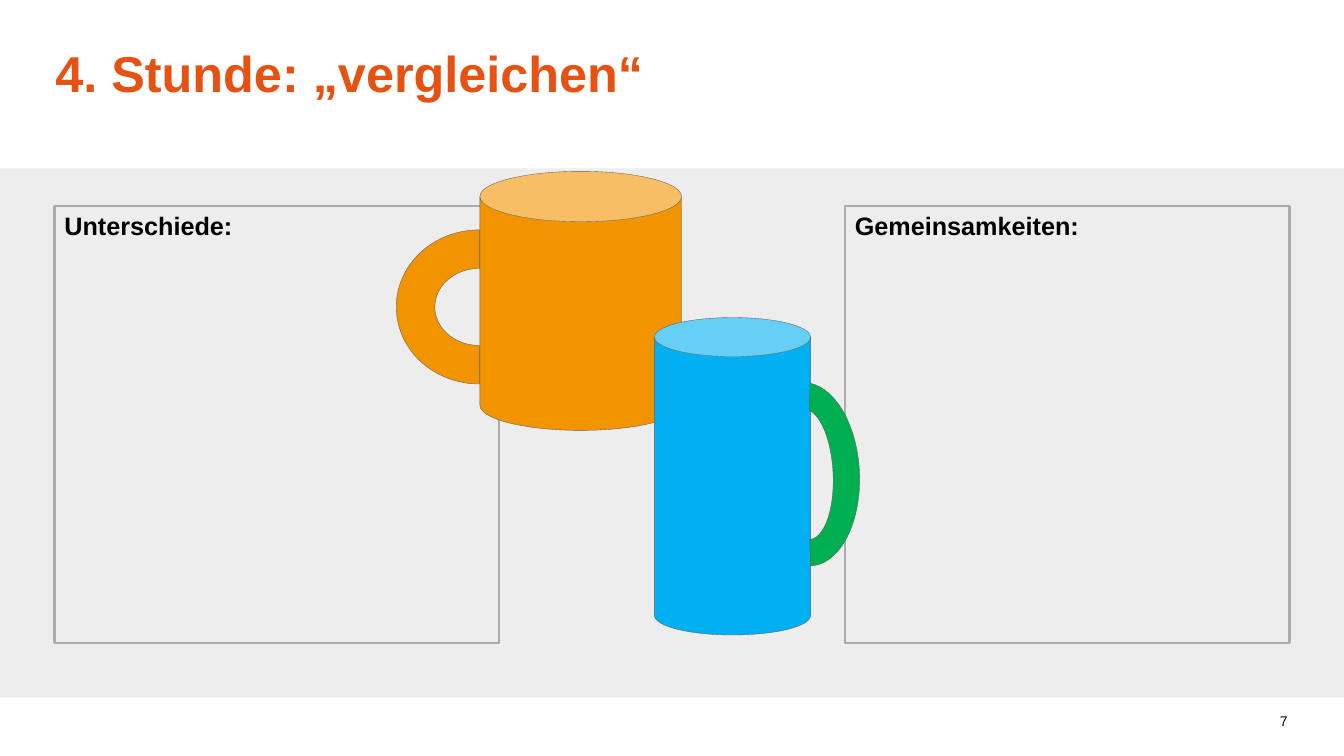
from dataclasses import dataclass
from typing import Any

from pptx import Presentation
from pptx import util as u
from pptx.dml.color import RGBColor
from pptx.enum import shapes, text


@dataclass(frozen=True)
class Theme:
    font: str = "Arial"
    title_size: int = 36
    label_size: int = 18
    number_size: int = 10
    title: str = "E75112"
    ink: str = "000000"
    band: str = "EDEDED"
    frame: str = "ACACAC"
    outline: str = "5F5F5F"
    orange: str = "F29400"
    blue: str = "00B0F0"
    green: str = "00B050"


@dataclass(frozen=True)
class Box:
    left: float
    top: float
    width: float
    height: float

    def lengths(self) -> tuple[u.Length, ...]:
        return tuple(u.Inches(v) for v in (self.left, self.top, self.width, self.height))


@dataclass(frozen=True)
class Panel:
    label: str
    left: float


@dataclass(frozen=True)
class MugPart:
    kind: shapes.MSO_SHAPE
    box: Box
    fill: str
    rotation: float = 0
    adjustments: tuple[float, ...] = ()


THEME = Theme()
CAN, ARC = shapes.MSO_SHAPE.CAN, shapes.MSO_SHAPE.BLOCK_ARC
PANEL_TOP, PANEL_WIDTH, PANEL_HEIGHT = 2.04, 4.41, 4.34

LEFT_PANEL = Panel("Unterschiede:", 0.54)
RIGHT_PANEL = Panel("Gemeinsamkeiten:", 8.38)
ORANGE_HANDLE = MugPart(ARC, Box(3.99, 2.22, 1.53, 1.65), THEME.orange, 270)
MUG_PARTS = (
    MugPart(CAN, Box(4.76, 1.7, 2, 2.57), THEME.orange),
    MugPart(CAN, Box(6.49, 3.15, 1.55, 3.15), THEME.blue),
    MugPart(ARC, Box(7.09, 4.18, 1.82, 1.05), THEME.green, 87.3, (110.965, 0, 0.25)),
)


def add_shape(s: Any, kind: shapes.MSO_SHAPE, box: Box, fill: str | None = None,
              line: str | None = None, line_width: float = 0) -> Any:
    sp = s.shapes.add_shape(kind, *box.lengths())
    sp.shadow.inherit = False
    if fill:
        sp.fill.solid()
        sp.fill.fore_color.rgb = RGBColor.from_string(fill)
    else:
        sp.fill.background()
    if line:
        sp.line.color.rgb = RGBColor.from_string(line)
        sp.line.width = u.Pt(line_width)
    else:
        sp.line.fill.background()
    return sp


def write(tf: Any, content: str, size: int, color: str, bold: bool = True,
          align: text.PP_ALIGN = text.PP_ALIGN.LEFT,
          anchor: text.MSO_ANCHOR = text.MSO_ANCHOR.TOP) -> None:
    tf.word_wrap = True
    tf.vertical_anchor = anchor
    p = tf.paragraphs[0]
    p.alignment = align
    r = p.add_run()
    r.text = content
    r.font.name = THEME.font
    r.font.size = u.Pt(size)
    r.font.bold = bold
    r.font.color.rgb = RGBColor.from_string(color)


def add_flush_text(s: Any, box: Box) -> Any:
    """Add a text box without insets and return its text frame."""
    tf = s.shapes.add_textbox(*box.lengths()).text_frame
    tf.margin_left = tf.margin_top = tf.margin_right = tf.margin_bottom = 0
    return tf


def add_panel(s: Any, panel: Panel) -> None:
    box = Box(panel.left, PANEL_TOP, PANEL_WIDTH, PANEL_HEIGHT)
    sp = add_shape(s, shapes.MSO_SHAPE.RECTANGLE, box, line=THEME.frame, line_width=1.5)
    write(sp.text_frame, panel.label, THEME.label_size, THEME.ink)


def add_mug_part(s: Any, part: MugPart) -> None:
    sp = add_shape(s, part.kind, part.box, part.fill, THEME.outline, 0.25)
    sp.rotation = part.rotation
    for i, value in enumerate(part.adjustments):
        sp.adjustments[i] = value


def main() -> None:
    prs = Presentation()
    prs.slide_width, prs.slide_height = u.Inches(13.33), u.Inches(7.5)
    s = prs.slides.add_slide(prs.slide_layouts[6])

    add_shape(s, shapes.MSO_SHAPE.RECTANGLE, Box(0, 1.67, 13.33, 5.25), THEME.band)
    add_panel(s, LEFT_PANEL)
    write(add_flush_text(s, Box(0.55, 0.42, 7.83, 1.07)), "4. Stunde: „vergleichen“",
          THEME.title_size, THEME.title)
    write(add_flush_text(s, Box(11.87, 6.95, 0.9, 0.4)), "7", THEME.number_size, THEME.ink,
          bold=False, align=text.PP_ALIGN.RIGHT, anchor=text.MSO_ANCHOR.MIDDLE)
    add_mug_part(s, ORANGE_HANDLE)
    add_panel(s, RIGHT_PANEL)
    for part in MUG_PARTS:
        add_mug_part(s, part)

    prs.save("out.pptx")


if __name__ == "__main__":
    main()
